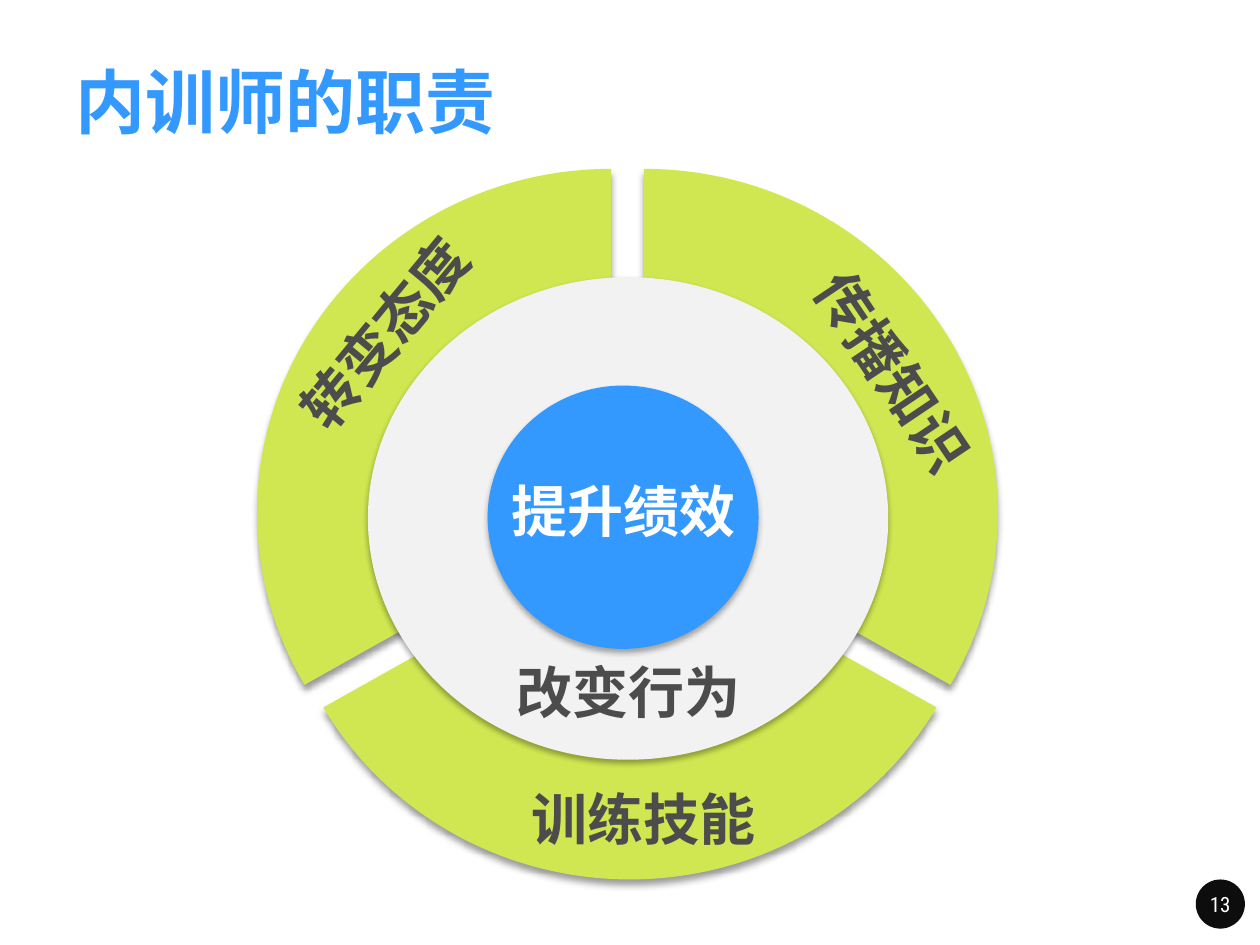
import math

import lxml.etree
import pptx
import pptx.dml.color
import pptx.enum.shapes
import pptx.enum.text
import pptx.oxml.ns
import pptx.util

THEME = {
    "blue": "3399FF", "lime": "D1E751", "pale": "F2F2F2",
    "ink": "4C4C4C", "white": "FFFFFF", "badge": "0D0D0D",
    "cjk": "Noto Sans CJK SC", "latin": "Roboto Condensed",
    "title_size": 40, "label_size": 32, "number_size": 12,
}
qn = pptx.oxml.ns.qn
align = pptx.enum.text.PP_ALIGN
middle = pptx.enum.text.MSO_ANCHOR.MIDDLE
oval = pptx.enum.shapes.MSO_SHAPE.OVAL

deck = pptx.Presentation()
deck.slide_width = pptx.util.Inches(10)
deck.slide_height = pptx.util.Inches(7.5)
cell = deck.slide_width // 100  # grid of 100 columns by 75 rows
slide = deck.slides.add_slide(deck.slide_layouts[5])


def paint(shape, color, shadow=None):
    """Fill without outline; shadow is (opacity %, blur pt, distance pt), cast downwards."""
    shape.fill.solid()
    shape.fill.fore_color.rgb = pptx.dml.color.RGBColor.from_string(THEME[color])
    shape.line.fill.background()
    shape.shadow.inherit = False
    if shadow:
        opacity, blur, distance = shadow
        effects = shape._element.spPr.find(qn("a:effectLst"))
        outer = lxml.etree.SubElement(
            effects, qn("a:outerShdw"), blurRad=str(pptx.util.Pt(blur)),
            dist=str(pptx.util.Pt(distance)), dir="5400000", rotWithShape="0")
        black = lxml.etree.SubElement(outer, qn("a:srgbClr"), val="000000")
        lxml.etree.SubElement(black, qn("a:alpha"), val=str(opacity * 1000))


def write(frame, words, size, color, alignment, font="cjk", bold=True):
    frame.text = words
    paragraph = frame.paragraphs[0]
    paragraph.alignment = alignment
    run = paragraph.runs[0]
    run.font.size = pptx.util.Pt(THEME[size])
    run.font.bold = bold
    run.font.color.rgb = pptx.dml.color.RGBColor.from_string(THEME[color])
    run.font.name = THEME[font]
    lxml.etree.SubElement(run.font._element, qn("a:ea"), typeface=THEME[font])


# Title
title = slide.shapes.title
title.left, title.top, title.width, title.height = (
    int(share * cell) for share in (5, 3.6, 89.9, 8.7))
title.text_frame.vertical_anchor = middle
write(title.text_frame, "内训师的职责", "title_size", "blue", align.LEFT)

# Page number badge
badge = slide.shapes.add_shape(
    oval, *(int(share * cell) for share in (94.9, 69.8, 3.9, 3.9)))
paint(badge, "badge")
number = badge.text_frame
number.margin_left = number.margin_right = pptx.util.Inches(0.04)
number.margin_top = number.margin_bottom = pptx.util.Inches(0.04)
number.vertical_anchor = middle
write(number, "13", "number_size", "white", align.CENTER, "latin", False)

# Three sectors of 120 degrees, each pulled away from the centre
radius_x, radius_y = 28.1 * cell, 27.3 * cell
sector_tips = [(51.1, 40.7), (50, 42.5), (48.5, 40.7)]
for index, (column, row) in enumerate(sector_tips):
    tip_x, tip_y = int(column * cell), int(row * cell)
    start = -90 + 120 * index
    # Each arc is split where it crosses an axis of the ellipse
    angles = [math.radians(angle) for angle in (start, 90 * index, start + 120)]
    rim = [(int(tip_x + radius_x * math.cos(angle)),
            int(tip_y + radius_y * math.sin(angle))) for angle in angles]
    outline = slide.shapes.build_freeform(*rim[0])
    outline.add_line_segments([*rim[1:], (tip_x, tip_y)], close=True)
    sector = outline.convert_to_shape()

    # Bend the first two edges into Bézier curves along the rim
    edges = list(sector._element.iter(qn("a:lnTo")))[:2]
    for step, edge in enumerate(edges):
        begin, end = angles[step:step + 2]
        reach = 4 / 3 * math.tan((end - begin) / 4)
        curve = lxml.etree.Element(qn("a:cubicBezTo"))
        for angle, (x, y), pull in ((begin, rim[step], reach),
                                    (end, rim[step + 1], -reach)):
            control_x = x - pull * radius_x * math.sin(angle) - sector.left
            control_y = y + pull * radius_y * math.cos(angle) - sector.top
            lxml.etree.SubElement(curve, qn("a:pt"),
                                  x=str(int(control_x)), y=str(int(control_y)))
        curve.append(edge[0])
        edge.getparent().replace(edge, curve)
    paint(sector, "lime", (40, 4, 3))

# Inner discs
discs = [((29.2, 22, 41.3, 38.3), "pale"), ((38.7, 30.6, 21.5, 20.9), "blue")]
for box, color in discs:
    disc = slide.shapes.add_shape(oval, *(int(share * cell) for share in box))
    paint(disc, color, (32, 3.5, 2.2))

# Labels: words, left, top, width, rotation, colour
labels = [
    ("转变态度", 20.5, 23.2, 20, 309.5, "ink"),
    ("传播知识", 60.9, 26.3, 20, 56.1, "ink"),
    ("训练技能", 41.1, 61.8, 20, 0, "ink"),
    ("改变行为", 37.2, 51.7, 25.4, 0, "ink"),
    ("提升绩效", 39.5, 37.3, 20, 0, "white"),
]
for words, left, top, width, rotation, color in labels:
    label = slide.shapes.add_textbox(
        *(int(share * cell) for share in (left, top, width, 6.4)))
    label.rotation = rotation
    label.text_frame.word_wrap = width > 20
    label.text_frame.auto_size = pptx.enum.text.MSO_AUTO_SIZE.SHAPE_TO_FIT_TEXT
    write(label.text_frame, words, "label_size", color, align.CENTER)

deck.save("out.pptx")
